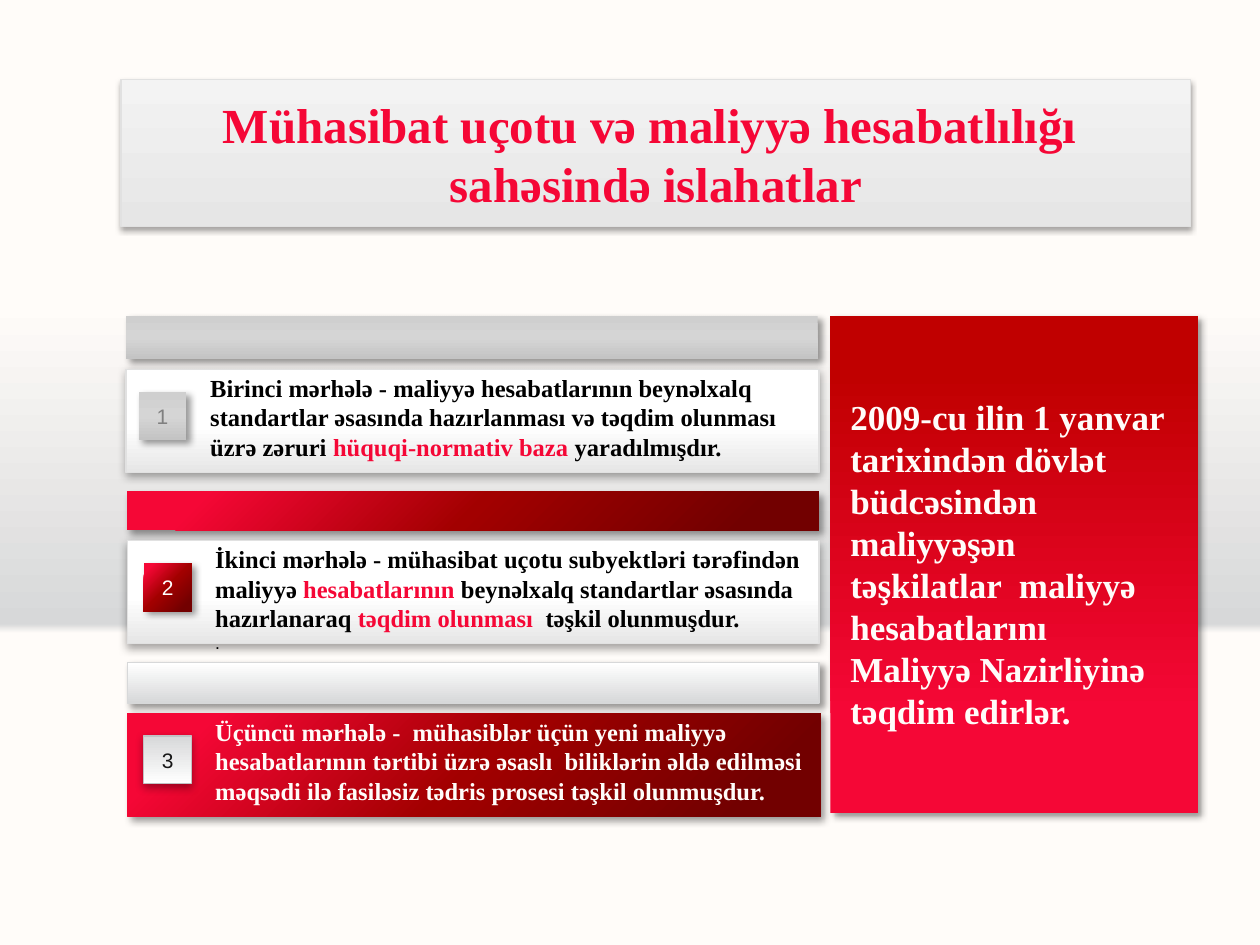
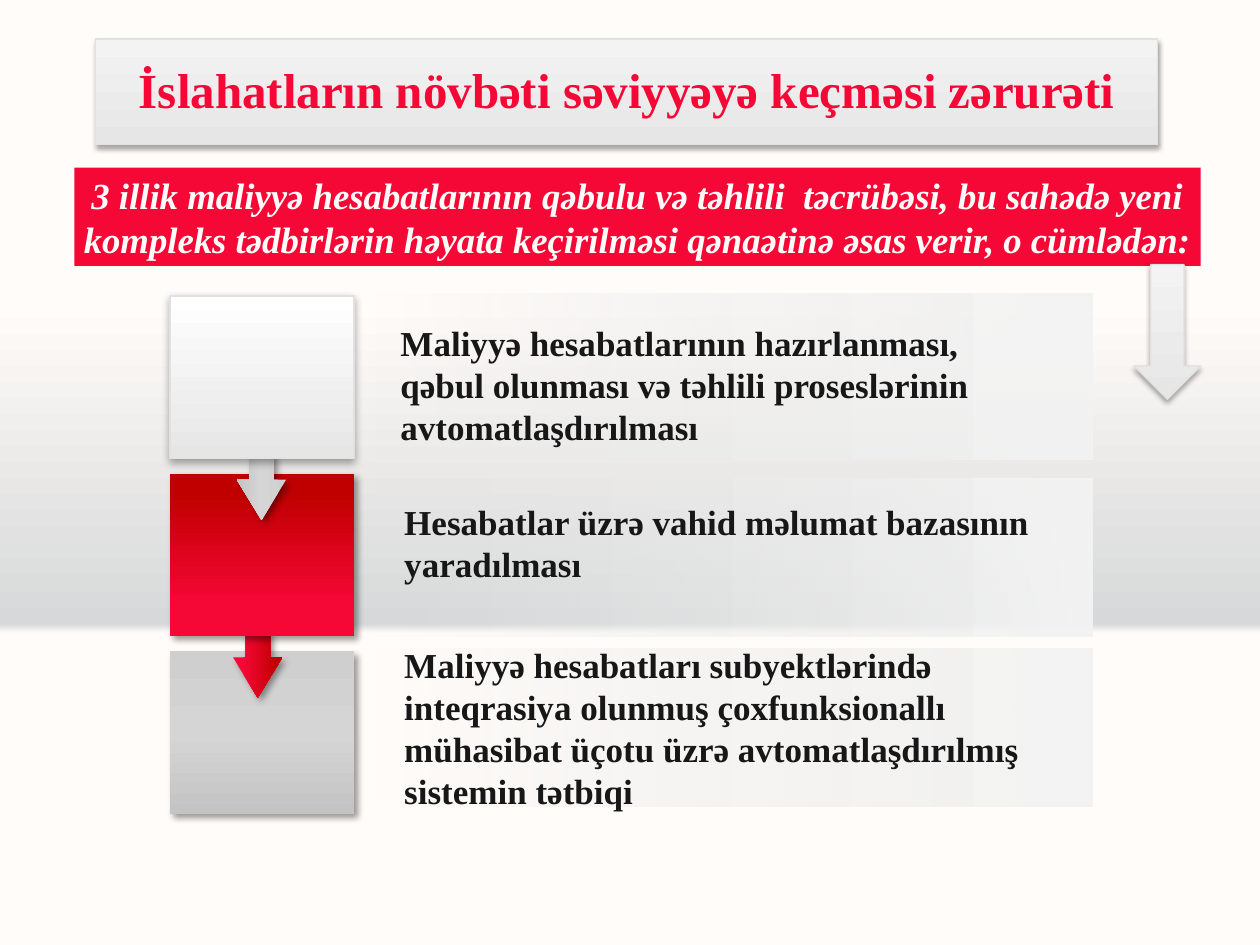
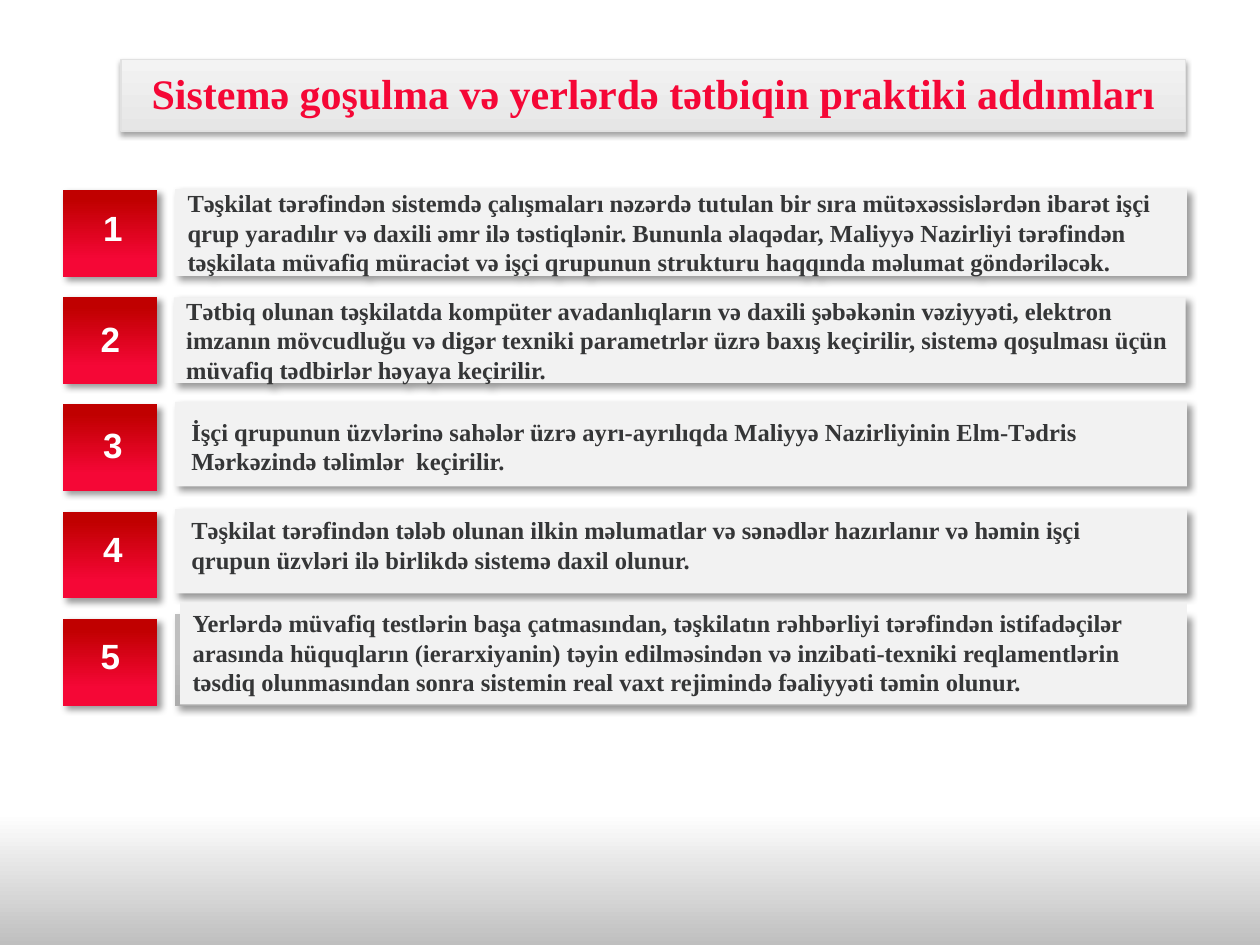
from dataclasses import dataclass, replace

from lxml.etree import SubElement
from pptx import Presentation
from pptx.dml.color import RGBColor
from pptx.enum.shapes import MSO_SHAPE
from pptx.enum.text import MSO_ANCHOR, MSO_AUTO_SIZE, PP_ALIGN
from pptx.oxml.ns import qn
from pptx.util import Pt

EMU_PER_PX = 9144


@dataclass(frozen=True)
class Box:
    """A rectangle in px, at 100 px to the inch."""

    left: int
    top: int
    width: int
    height: int

    def inner(self, left, top, width, height):
        """Return a box placed relative to this one."""
        return Box(self.left + left, self.top + top, width, height)

    def emu(self):
        """Return the four lengths in EMU."""
        return [length * EMU_PER_PX for length in (self.left, self.top, self.width, self.height)]


@dataclass(frozen=True)
class Gradient:
    """Stops of (position, colour, optional opacity) along an angle in degrees."""

    stops: tuple
    angle: int


@dataclass(frozen=True)
class Shadow:
    """An outer shadow with opacity in percent and lengths in points."""

    opacity: int
    blur: float
    distance: float
    angle: int


@dataclass(frozen=True)
class Look:
    """Fill, outline and shadow of a shape."""

    fill: object
    line: str = None
    shadow: Shadow = None


@dataclass(frozen=True)
class Style:
    """Character formatting of a run."""

    size: int
    colour: str
    font: str = "Times New Roman"
    bold: bool = True
    italic: bool = False


class Theme:
    """Colours, looks and type sizes shared by the slides."""

    red, cream, white, black = "F50736", "FFFCF9", "FFFFFF", "000000"
    ink, charcoal, pale, edge, steel = "171717", "353637", "F2F2F2", "E1E1E1", "D7D8D9"
    drop = Shadow(40, 4, 3, 45)
    soft = Shadow(35, 5, 1.8, 90)
    thin = Shadow(35, 3.1, 1.8, 90)
    horizon = Gradient(((33, cream), (34, steel, 49), (68, cream)), 270)
    floor = Gradient(((86, white), (100, "BFBFBF"), (100, "ACACAC")), 90)
    raised = Look(Gradient(((0, "E6E6E6"), (100, "F3F3F3")), 270), edge, thin)
    panel = Look(Gradient(((0, "E6E6E6"), (45, white), (100, white)), 270), edge, soft)
    snow = Look(Gradient(((0, "E6E6E6"), (100, white)), 270), edge, soft)
    grey = Look(Gradient(((0, "CFCFCF"), (50, "D5D5D5"), (100, "C4C4C4")), 90), None, drop)
    scarlet = Look(Gradient(((11, red), (20, red), (89, "C00000")), 270), None, drop)
    crimson = Look(Gradient(((11, red), (50, "A20000"), (89, "720000")), 45), None, drop)
    silver = Look(Gradient(((0, white), (1, white), (100, steel)), 90), steel, drop)
    button = Look(Gradient(((0, white), (100, steel)), 270), "C1C2C4", soft)
    fade = Look(Gradient(((0, "E6E6E6", 0), (100, "F3F3F3")), 0))
    slate = Look(Gradient(((0, "BFBFBF"), (50, "BFBFBF"), (100, "ACACAC")), 90), None, drop)
    card = Look(pale, None, drop)
    flat = Look(pale)
    band = Look(red)
    title = Style(28, red)
    small_title = Style(24, red)
    lead = Style(21, cream, italic=True)
    statement = Style(20, cream)
    point = Style(20, ink)
    body = Style(14, black)
    accent = Style(14, red)
    light_body = Style(14, cream)
    step_body = Style(14, charcoal)
    badge = Style(12, white, "Arial", False)
    step_number = Style(20, white, "Arial")
    dot = Style(10, black, "Arial", False)


def apply_gradient(no_fill, gradient):
    """Replace an empty fill element with a linear gradient."""
    parent = no_fill.getparent()
    fill = SubElement(parent, qn("a:gradFill"), rotWithShape="1")
    parent.replace(no_fill, fill)
    stop_list = SubElement(fill, qn("a:gsLst"))
    for position, colour, *opacity in gradient.stops:
        stop = SubElement(stop_list, qn("a:gs"), pos=str(position * 1000))
        paint = SubElement(stop, qn("a:srgbClr"), val=colour)
        if opacity:
            SubElement(paint, qn("a:alpha"), val=str(opacity[0] * 1000))
    SubElement(fill, qn("a:lin"), ang=str(gradient.angle * 60000), scaled="0")


def apply_shadow(shape, shadow):
    """Give a shape an outer shadow."""
    effects = shape.element.spPr.find(qn("a:effectLst"))
    outer = SubElement(effects, qn("a:outerShdw"), blurRad=str(Pt(shadow.blur)),
                       dist=str(Pt(shadow.distance)), dir=str(shadow.angle * 60000),
                       algn="ctr", rotWithShape="0")
    paint = SubElement(outer, qn("a:srgbClr"), val=Theme.black)
    SubElement(paint, qn("a:alpha"), val=str(shadow.opacity * 1000))


def draw(slide, box, look, kind=MSO_SHAPE.RECTANGLE):
    """Add a preset shape with the given look."""
    shape = slide.shapes.add_shape(kind, *box.emu())
    shape.shadow.inherit = False
    if isinstance(look.fill, Gradient):
        shape.fill.background()
        apply_gradient(shape.element.spPr.find(qn("a:noFill")), look.fill)
    else:
        shape.fill.solid()
        shape.fill.fore_color.rgb = RGBColor.from_string(look.fill)
    if look.line:
        shape.line.color.rgb = RGBColor.from_string(look.line)
        shape.line.width = Pt(0.75)
    else:
        shape.line.fill.background()
    if look.shadow:
        apply_shadow(shape, look.shadow)
    return shape


def write(shape, paragraphs, align=PP_ALIGN.LEFT, anchor=MSO_ANCHOR.MIDDLE,
          insets=(10, 5), spacing=None, grow=False):
    """Write paragraphs, each a list of (text, style) runs, into a shape."""
    frame = shape.text_frame
    frame.word_wrap = True
    frame.auto_size = MSO_AUTO_SIZE.SHAPE_TO_FIT_TEXT if grow else MSO_AUTO_SIZE.NONE
    frame.vertical_anchor = anchor
    frame.margin_left = frame.margin_right = insets[0] * EMU_PER_PX
    frame.margin_top = frame.margin_bottom = insets[1] * EMU_PER_PX
    for index, runs in enumerate(paragraphs):
        paragraph = frame.add_paragraph() if index else frame.paragraphs[0]
        paragraph.alignment = align
        if spacing:
            paragraph.line_spacing = spacing
        for text, style in runs:
            run = paragraph.add_run()
            run.text = text
            run.font.name = style.font
            run.font.size = Pt(style.size)
            run.font.bold = style.bold
            run.font.italic = style.italic
            run.font.color.rgb = RGBColor.from_string(style.colour)


def label(slide, box, paragraphs, **options):
    """Add a text box, which starts at its top unless told otherwise."""
    settings = {"anchor": MSO_ANCHOR.TOP, "grow": True, **options}
    write(slide.shapes.add_textbox(*box.emu()), paragraphs, **settings)


def add_slide(presentation, background):
    """Add a blank slide with a gradient background."""
    slide = presentation.slides.add_slide(presentation.slide_layouts[6])
    slide.background.fill.background()
    apply_gradient(slide.element.find(f".//{qn('p:bgPr')}/{qn('a:noFill')}"), background)
    return slide


def title_bar(slide, box, lines, style=Theme.title, spacing=0.95):
    """Draw the raised title bar with its centred lines."""
    write(draw(slide, box, Theme.raised), [[(line, style)] for line in lines],
          PP_ALIGN.CENTER, insets=(0, 5), spacing=spacing)


@dataclass(frozen=True)
class Stage:
    """One reform stage: its box, looks and text."""

    box: Box
    bar: Look
    panel: Look
    badge: Look
    badge_left: int
    number_colour: str
    paragraphs: list


def reform_stage(slide, stage, number):
    """Draw a bar above a panel with a numbered badge and text."""
    box = stage.box
    panel_top = box.height - 82
    text_left = stage.badge_left + 47
    draw(slide, box.inner(0, 0, 549, panel_top - 8), stage.bar)
    draw(slide, box.inner(0, panel_top, box.width, 82), stage.panel)
    badge = draw(slide, box.inner(stage.badge_left, panel_top + 18, 38, 38), stage.badge)
    write(badge, [[(str(number), replace(Theme.badge, colour=stage.number_colour))]],
          PP_ALIGN.CENTER, insets=(0, 5))
    label(slide, box.inner(text_left, panel_top - 2, box.width - 2 - text_left, 104),
          stage.paragraphs)


def conclusion(slide, box, text):
    """Draw the tall red panel with its statement."""
    draw(slide, box, Theme.scarlet)
    label(slide, box.inner(6, 37, 271, 318), [[(text, Theme.statement)]],
          anchor=MSO_ANCHOR.MIDDLE, grow=False)


def reforms_slide(presentation):
    """Build the slide on the three reform stages."""
    slide = add_slide(presentation, Theme.horizon)
    title_bar(slide, Box(96, 63, 849, 117),
              ["Mühasibat uçotu və maliyyə hesabatlılığı ", "sahəsində islahatlar"], spacing=None)
    stages = [
        Stage(Box(100, 251, 550, 124), Theme.grey, Theme.panel, Theme.grey, 10, "808080", [[
            ("Birinci mərhələ - maliyyə hesabatlarının beynəlxalq standartlar əsasında "
             "hazırlanması və təqdim olunması üzrə zəruri ", Theme.body),
            ("hüquqi-normativ baza ", Theme.accent),
            ("yaradılmışdır.", Theme.body)]]),
        Stage(Box(101, 390, 549, 121), Theme.crimson, Theme.panel, Theme.crimson, 13, Theme.white, [[
            ("İkinci mərhələ - mühasibat uçotu subyektləri tərəfindən maliyyə ", Theme.body),
            ("hesabatlarının ", Theme.accent),
            ("beynəlxalq standartlar əsasında hazırlanaraq ", Theme.body),
            ("təqdim olunması  ", Theme.accent),
            ("təşkil olunmuşdur.", Theme.body)],
            [(". ", Theme.dot)]]),
        Stage(Box(101, 526, 550, 122), Theme.silver, Theme.crimson, Theme.button, 13, Theme.ink, [[
            ("Üçüncü mərhələ -  mühasiblər üçün yeni maliyyə hesabatlarının tərtibi üzrə əsaslı  "
             "biliklərin əldə edilməsi məqsədi ilə fasiləsiz tədris prosesi təşkil olunmuşdur.",
             Theme.light_body)]]),
    ]
    for number, stage in enumerate(stages, 1):
        reform_stage(slide, stage, number)
    conclusion(slide, Box(659, 251, 292, 394),
               "2009-cu ilin 1 yanvar tarixindən dövlət büdcəsindən maliyyəşən təşkilatlar  "
               "maliyyə hesabatlarını Maliyyə Nazirliyinə təqdim edirlər.")


def need_row(slide, box, text_box, lines):
    """Draw a fading strip with the text of one need."""
    draw(slide, box, Theme.fade)
    label(slide, text_box, [[(line, Theme.point)] for line in lines])


def block_column(slide, box):
    """Stack three blocks from the bottom up, joined by arrows."""
    blocks = [(Theme.grey, Theme.scarlet, 43), (Theme.scarlet, Theme.grey, 46),
              (Theme.snow, None, 0)]
    pitch = (box.height - 129) // 2
    for level, (look, arrow_look, arrow_left) in enumerate(blocks):
        top = (2 - level) * pitch
        draw(slide, box.inner(0, top, box.width, 129), look)
        if arrow_look:
            arrow = draw(slide, box.inner(arrow_left, top - 9, 53, 39), arrow_look,
                         MSO_SHAPE.RIGHT_ARROW)
            arrow.rotation = 90
            arrow.adjustments[0], arrow.adjustments[1] = 0.5, 0.825


def needs_slide(presentation):
    """Build the slide on why the reforms must move on."""
    slide = add_slide(presentation, Theme.horizon)
    rows = [
        (Box(296, 233, 571, 132), (12, 17, 558, 111),
         ["Maliyyə hesabatlarının hazırlanması,",
          "qəbul olunması və təhlili proseslərinin avtomatlaşdırılması"]),
        (Box(296, 380, 571, 125), (15, 12, 552, 77),
         ["Hesabatlar üzrə vahid məlumat bazasının yaradılması"]),
        (Box(296, 515, 571, 125), (15, -9, 555, 163),
         ["Maliyyə hesabatları subyektlərində inteqrasiya olunmuş çoxfunksionallı "
          "mühasibat üçotu üzrə avtomatlaşdırılmış sistemin tətbiqi"]),
    ]
    for box, text_place, lines in rows:
        need_row(slide, box, box.inner(*text_place), lines)
    write(draw(slide, Box(59, 133, 894, 78), Theme.band),
          [[("3 illik maliyyə hesabatlarının qəbulu və təhlili  təcrübəsi, bu sahədə yeni "
             "kompleks tədbirlərin həyata keçirilməsi qənaətinə əsas verir, o cümlədən:",
             Theme.lead)]], PP_ALIGN.CENTER, insets=(0, 0))
    title_bar(slide, Box(76, 31, 843, 84), ["İslahatların növbəti səviyyəyə keçməsi zərurəti"])
    block_column(slide, Box(135, 235, 146, 412))
    draw(slide, Box(900, 210, 53, 107), Theme.raised, MSO_SHAPE.DOWN_ARROW)


@dataclass(frozen=True)
class Step:
    """One practical step, with places relative to its row."""

    text: str
    panel: tuple
    number: tuple
    caption: tuple = None
    panel_look: Look = Theme.card
    caption_look: Look = None


def practical_step(slide, box, step, number):
    """Draw a numbered red square and the panel of one step."""
    paragraphs = [[(step.text, Theme.step_body)]]
    panel = draw(slide, box.inner(*step.panel), step.panel_look)
    if not step.caption:
        write(panel, paragraphs)
    elif step.caption_look:
        write(draw(slide, box.inner(*step.caption), step.caption_look), paragraphs,
              anchor=MSO_ANCHOR.TOP, grow=True)
    else:
        label(slide, box.inner(*step.caption), paragraphs)
    draw(slide, box.inner(0, 0, 75, box.height), Theme.scarlet)
    label(slide, box.inner(*step.number, 71, 44), [[(str(number), Theme.step_number)]],
          align=PP_ALIGN.CENTER)


def steps_slide(presentation):
    """Build the slide on the five practical steps."""
    slide = add_slide(presentation, Theme.floor)
    title_bar(slide, Box(96, 47, 845, 57),
              ["Sistemə goşulma və yerlərdə tətbiqin praktiki addımları"], Theme.small_title)
    steps = [
        Step("Təşkilat tərəfindən sistemdə çalışmaları nəzərdə tutulan bir sıra mütəxəssislərdən "
             "ibarət işçi qrup yaradılır və daxili əmr ilə təstiqlənir. Bununla əlaqədar, Maliyyə "
             "Nazirliyi tərəfindən təşkilata müvafiq müraciət və işçi qrupunun strukturu haqqında "
             "məlumat göndəriləcək.", (89, -1, 803, 69), (4, 8)),
        Step("Tətbiq olunan təşkilatda kompüter avadanlıqların və daxili şəbəkənin vəziyyəti, "
             "elektron imzanın mövcudluğu və digər texniki parametrlər üzrə baxış keçirilir, "
             "sistemə qoşulması üçün müvafiq tədbirlər həyaya keçirilir.",
             (88, 0, 803, 68), (2, 11)),
        Step("İşçi qrupunun üzvlərinə sahələr üzrə ayrı-ayrılıqda Maliyyə Nazirliyinin "
             "Elm-Tədris Mərkəzində təlimlər  keçirilir.",
             (89, -2, 803, 67), (4, 10), (92, 5, 790, 57)),
        Step("Təşkilat tərəfindən tələb olunan ilkin məlumatlar və sənədlər hazırlanır və həmin "
             "işçi qrupun üzvləri ilə birlikdə sistemə daxil olunur.",
             (89, -2, 803, 67), (4, 8), (92, -2, 788, 57), caption_look=Theme.flat),
        Step("Yerlərdə müvafiq testlərin başa çatmasından, təşkilatın rəhbərliyi tərəfindən "
             "istifadəçilər arasında hüquqların (ierarxiyanin) təyin edilməsindən və "
             "inzibati-texniki reqlamentlərin təsdiq olunmasından sonra sistemin real vaxt "
             "rejimində fəaliyyəti təmin olunur.",
             (89, -4, 803, 73), (2, 8), (93, -13, 799, 81), Theme.slate, Theme.flat),
    ]
    for index, step in enumerate(steps):
        practical_step(slide, Box(50, 151 + 85 * index, 892, 69), step, index + 1)


def main():
    """Build and save the presentation."""
    presentation = Presentation()
    presentation.slide_width = 1000 * EMU_PER_PX
    presentation.slide_height = 750 * EMU_PER_PX
    reforms_slide(presentation)
    needs_slide(presentation)
    steps_slide(presentation)
    presentation.save("out.pptx")


if __name__ == "__main__":
    main()
